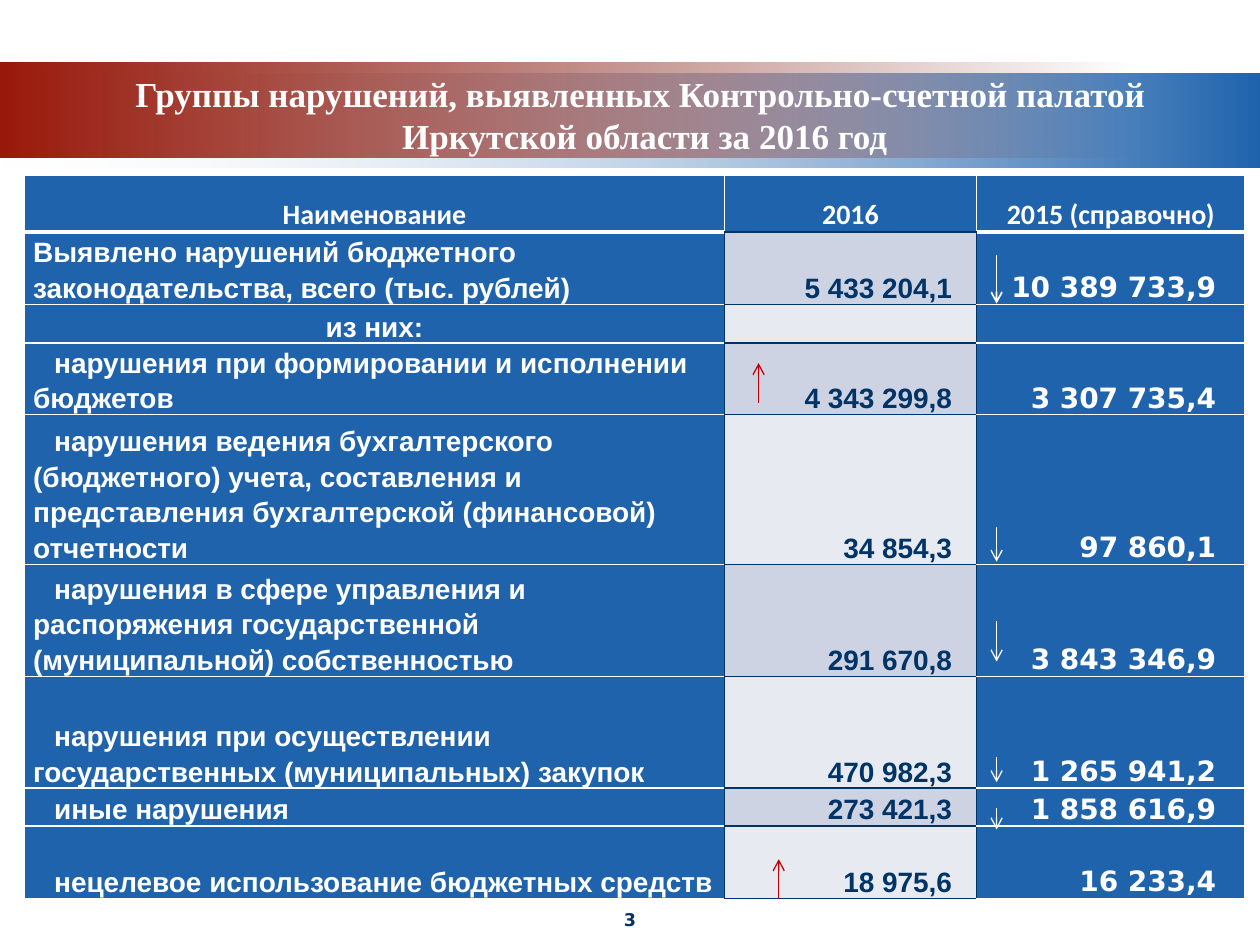
from lxml.etree import SubElement
from pptx import Presentation
from pptx.dml.color import RGBColor
from pptx.enum.shapes import MSO_CONNECTOR as Connector, MSO_SHAPE as Shape
from pptx.enum.text import MSO_ANCHOR as Anchor, PP_ALIGN as Align
from pptx.oxml import parse_xml
from pptx.oxml.ns import nsdecls, qn
from pptx.util import Pt

BLUE, NAVY, WHITE, RED = "1F63AD", "003366", "FFFFFF", "C00000"
BANDS = ("CDD3E3", "E8EAF1")
COLUMN_WIDTHS = (400, 144, 153.5)
ROW_HEIGHTS = (32.5, 41.5, 22, 41, 85.5, 64, 64, 21.5, 41.5)
TABLE_LINE_SPACING = 20.4
HEADERS = ("Наименование", "2016", "2015 (справочно)")
VIOLATIONS = (
    ("Выявлено нарушений бюджетного законодательства, всего (тыс. рублей)",
     "5 433 204,1", "10 389 733,9"),
    ("из них:", "", ""),
    ("нарушения при формировании и исполнении бюджетов",
     "4 343 299,8", "3 307 735,4"),
    ("нарушения ведения бухгалтерского (бюджетного) учета, составления и "
     "представления бухгалтерской (финансовой) отчетности",
     "34 854,3", "97 860,1"),
    ("нарушения в сфере управления и распоряжения государственной "
     "(муниципальной) собственностью",
     "291 670,8", "3 843 346,9"),
    ("нарушения при осуществлении государственных (муниципальных) закупок",
     "470 982,3", "1 265 941,2"),
    ("иные нарушения", "273 421,3", "1 858 616,9"),
    ("нецелевое использование бюджетных средств", "18 975,6", "16 233,4"),
)
DECREASE_X = 569.5
DECREASES = ((145.5, 173.5, 1), (301, 321, 0.75), (355, 378, 0.75),
             (432.5, 447, 0.75), (461.5, 474, 0.75))
INCREASES = ((433.5, 230.5, 207.5), (445, 514, 491))


def color(value):
    return RGBColor.from_string(value)


def add_run(paragraph, text, size, font, text_color):
    run = paragraph.add_run()
    run.text = text
    run.font.size = Pt(size)
    run.font.name = font
    run.font.bold = True
    run.font.color.rgb = color(text_color)


def add_text(slide, left, top, width, height, lines, size, font, text_color,
             anchor=Anchor.TOP):
    frame = slide.shapes.add_textbox(
        Pt(left), Pt(top), Pt(width), Pt(height)).text_frame
    frame.word_wrap = True
    frame.vertical_anchor = anchor
    paragraph = frame.paragraphs[0]
    paragraph.alignment = Align.CENTER
    for index, line in enumerate(lines):
        if index:
            paragraph.add_line_break()
        add_run(paragraph, line, size, font, text_color)


def add_gradient_bar(slide, top, width, start, end, clear_stop):
    bar = slide.shapes.add_shape(Shape.RECTANGLE, 0, Pt(top), Pt(width), Pt(54))
    bar.shadow.inherit = False
    bar.line.fill.background()
    bar.fill.gradient()
    bar.fill.gradient_angle = 0
    for stop, value in zip(bar.fill.gradient_stops, (start, end)):
        stop.color.rgb = color(value)
    stops = bar._element.spPr.findall(".//" + qn("a:srgbClr"))
    SubElement(stops[clear_stop], qn("a:alpha"), val="0")


def add_arrow(slide, x, start, end, line_color, width):
    arrow = slide.shapes.add_connector(
        Connector.STRAIGHT, Pt(x), Pt(start), Pt(x), Pt(end))
    arrow.line.color.rgb = color(line_color)
    arrow.line.width = Pt(width)
    SubElement(arrow.line._get_or_add_ln(), qn("a:tailEnd"), type="arrow")
    SubElement(arrow._element.spPr, qn("a:effectLst"))


def set_borders(cell, **borders):
    properties = cell._tc.get_or_add_tcPr()
    for index, side in enumerate("LRTB"):
        line_color, width = borders[side]
        properties.insert(index, parse_xml(
            f'<a:ln{side} {nsdecls("a")} w="{Pt(width)}"><a:solidFill>'
            f'<a:srgbClr val="{line_color}"/></a:solidFill></a:ln{side}>'))


def style_cell(cell, row, column):
    middle = column == 1
    body = row > 0
    cell.fill.solid()
    cell.fill.fore_color.rgb = color(
        BANDS[(row - 1) % 2] if body and middle else BLUE)
    cell.vertical_anchor = Anchor.BOTTOM
    cell.margin_left = Pt(5)
    cell.margin_right = Pt((5, 14, 16.5)[column] if body else 5)
    cell.margin_top = cell.margin_bottom = 0
    thin, dark = (WHITE, 1), (NAVY, 1)
    if body and middle:
        set_borders(cell, L=dark, R=dark, T=dark, B=dark)
    else:
        set_borders(
            cell,
            L=dark if body and column == 2 else thin,
            R=dark if body and column == 0 else thin,
            T=(WHITE, 3) if row == 1 else thin,
            B=thin if body else dark if middle else (WHITE, 3))


def fill_cell(cell, text, row, column):
    style_cell(cell, row, column)
    if not text:
        return
    paragraph = cell.text_frame.paragraphs[0]
    paragraph.line_spacing = Pt(TABLE_LINE_SPACING)
    if row == 0 or text == "из них:":
        paragraph.alignment = Align.CENTER
    elif column:
        paragraph.alignment = Align.RIGHT
    else:
        paragraph.alignment = Align.LEFT
        if row > 2:
            paragraph._p.get_or_add_pPr().set("indent", str(Pt(12)))
    font = ("Arial", "Arial", "DejaVu Sans")[column] if row else "Calibri"
    add_run(paragraph, text, 16, font, NAVY if row and column == 1 else WHITE)


def add_violations_table(slide):
    rows = (HEADERS, *VIOLATIONS)
    table = slide.shapes.add_table(
        len(rows), len(HEADERS), Pt(14), Pt(100),
        Pt(sum(COLUMN_WIDTHS)), Pt(sum(ROW_HEIGHTS))).table
    table.horz_banding = False
    for column, width in zip(table.columns, COLUMN_WIDTHS):
        column.width = Pt(width)
    for row, height in zip(table.rows, ROW_HEIGHTS):
        row.height = Pt(height)
    for row, texts in enumerate(rows):
        for column, text in enumerate(texts):
            fill_cell(table.cell(row, column), text, row, column)


def main():
    presentation = Presentation()
    presentation.slide_width, presentation.slide_height = Pt(720), Pt(540)
    slide = presentation.slides.add_slide(presentation.slide_layouts[6])
    add_gradient_bar(slide, 42, 720, "F1F2F7", BLUE, 0)
    add_gradient_bar(slide, 36, 648, "99190B", "6D1208", 1)
    add_text(slide, 48, 43, 641, 44.5,
             ("Группы нарушений, выявленных Контрольно-счетной палатой ",
              "Иркутской области за 2016 год"),
             20, "Times New Roman", WHITE, Anchor.MIDDLE)
    add_violations_table(slide)
    for start, end, width in DECREASES:
        add_arrow(slide, DECREASE_X, start, end, WHITE, width)
    for x, start, end in INCREASES:
        add_arrow(slide, x, start, end, RED, 0.75)
    add_text(slide, 276, 516, 168, 20, ("3",), 10, "DejaVu Sans", NAVY)
    presentation.save("out.pptx")


if __name__ == "__main__":
    main()
